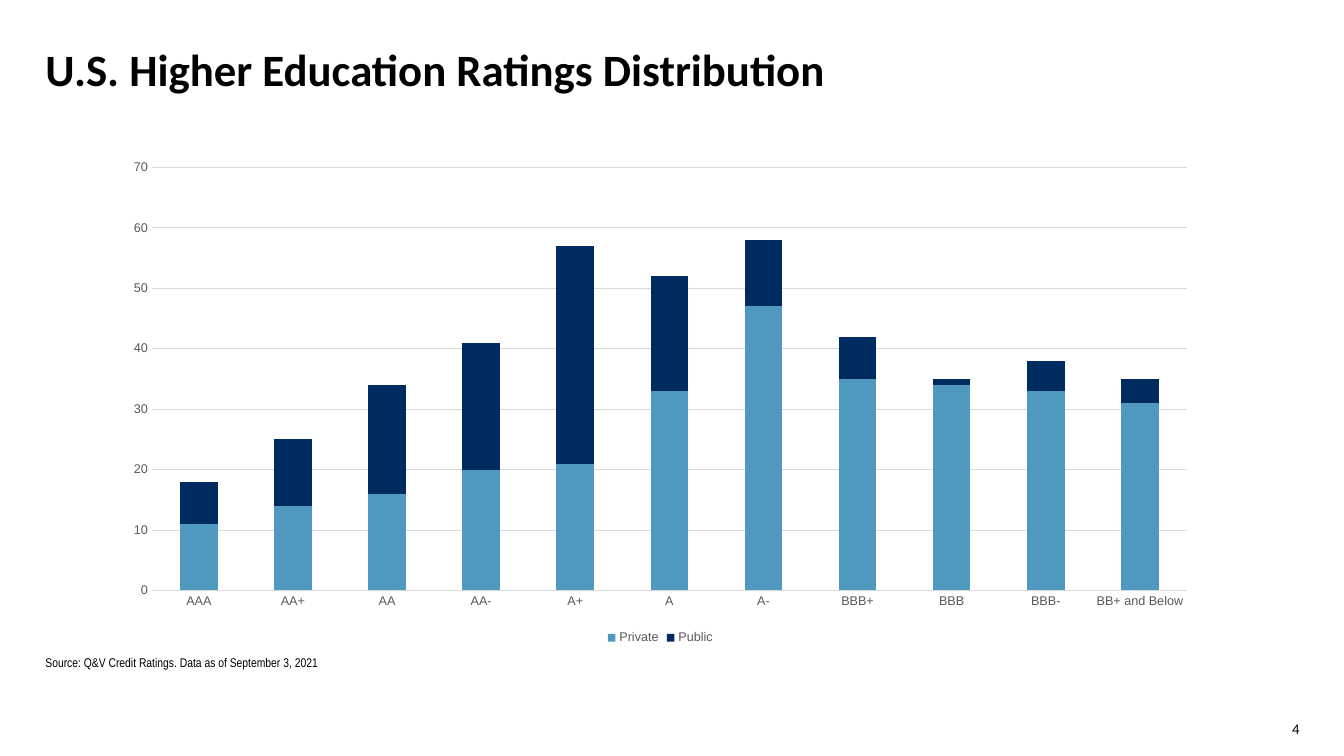
"""Build the higher education ratings distribution slide."""
from lxml import etree
from pptx import Presentation
from pptx.chart.data import CategoryChartData
from pptx.dml.color import RGBColor
from pptx.enum.chart import XL_CHART_TYPE, XL_LEGEND_POSITION, XL_TICK_MARK
from pptx.enum.text import MSO_ANCHOR, MSO_AUTO_SIZE, PP_ALIGN
from pptx.oxml.ns import qn
from pptx.util import Inches, Pt

STACKED = XL_CHART_TYPE.COLUMN_STACKED
BOTTOM = XL_LEGEND_POSITION.BOTTOM
NO_TICK = XL_TICK_MARK.NONE
TOP, MIDDLE, BASE = MSO_ANCHOR.TOP, MSO_ANCHOR.MIDDLE, MSO_ANCHOR.BOTTOM
NO_FIT = MSO_AUTO_SIZE.NONE
LEFT, RIGHT = PP_ALIGN.LEFT, PP_ALIGN.RIGHT
BLACK = RGBColor(0x00, 0x00, 0x00)
GRAY = RGBColor(0x59, 0x59, 0x59)
PALE = RGBColor(0xD9, 0xD9, 0xD9)
BLUE = RGBColor(0x4F, 0x99, 0xC1)
NAVY = RGBColor(0x00, 0x2B, 0x5F)


def style(font, name, size, color, bold=False):
    font.name, font.size, font.bold = name, Pt(size), bold
    font.color.rgb = color


def write(shape, place, insets, anchor, align, text, *look):
    shape.left, shape.top, shape.width, shape.height = map(Inches, place)
    frame = shape.text_frame
    frame.word_wrap = True
    frame.auto_size = NO_FIT
    frame.vertical_anchor = anchor
    (frame.margin_left, frame.margin_top,
     frame.margin_right, frame.margin_bottom) = map(Inches, insets)
    para = frame.paragraphs[0]
    para.alignment = align
    para.space_before = Pt(0)
    run = para.add_run()
    run.text = text
    style(run.font, *look)
    return para


deck = Presentation()
deck.slide_width, deck.slide_height = Inches(13.33), Inches(7.5)
slide = deck.slides.add_slide(deck.slide_layouts[1])

title = write(slide.shapes.title, (0.45, 0.24, 12.42, 0.95), (0, 0.05, 0.1, 0.05),
              MIDDLE, LEFT, "U.S. Higher Education Ratings Distribution",
              "Calibri", 32, BLACK, True)
title.line_spacing = 0.9

source = write(slide.placeholders[1], (0.45, 6.5, 12.44, 0.34), (0, 0, 0.1, 0),
               TOP, LEFT, "Source: Q&V Credit Ratings. Data as of September 3, 2021",
               "Arial Narrow", 9, BLACK)
source.space_after = Pt(3)
props = source._p.get_or_add_pPr()
props.set("marL", "0")
props.set("indent", "0")
etree.SubElement(props, qn("a:buNone"))

number = slide.shapes.add_textbox(0, 0, 0, 0)
write(number, (12.27, 6.91, 0.62, 0.41), (0.1, 0, 0, 0),
      BASE, RIGHT, "4", "Calibri", 10.5, BLACK)

data = CategoryChartData()
data.categories = ["AAA", "AA+", "AA", "AA-", "A+", "A", "A-",
                   "BBB+", "BBB", "BBB-", "BB+ and Below"]
data.add_series("Private", [11, 14, 16, 20, 21, 33, 47, 35, 34, 33, 31])
data.add_series("Public", [7, 11, 18, 21, 36, 19, 11, 7, 1, 5, 4])
chart = slide.shapes.add_chart(STACKED, Inches(1.11), Inches(1.49),
                               Inches(10.88), Inches(4.95), data).chart
chart.has_title = False
style(chart.font, "Arial", 10, BLACK)

plot = chart.plots[0]
plot.gap_width, plot.overlap = 150, 100
plot.vary_by_categories = False
for series, color in zip(plot.series, (BLUE, NAVY)):
    series.format.fill.solid()
    series.format.fill.fore_color.rgb = color

ratings, counts = chart.category_axis, chart.value_axis
for axis in (ratings, counts):
    axis.major_tick_mark = axis.minor_tick_mark = NO_TICK
    style(axis.tick_labels.font, "Arial", 9, GRAY)
counts.minimum_scale, counts.maximum_scale, counts.major_unit = 0, 70, 10
counts.has_major_gridlines = True
counts.format.line.fill.background()
for line in (ratings.format.line, counts.major_gridlines.format.line):
    line.color.rgb = PALE
    line.width = Pt(0.75)

chart.has_legend = True
chart.legend.position = BOTTOM
chart.legend.include_in_layout = False
style(chart.legend.font, "Arial", 9, GRAY)

deck.save("out.pptx")
